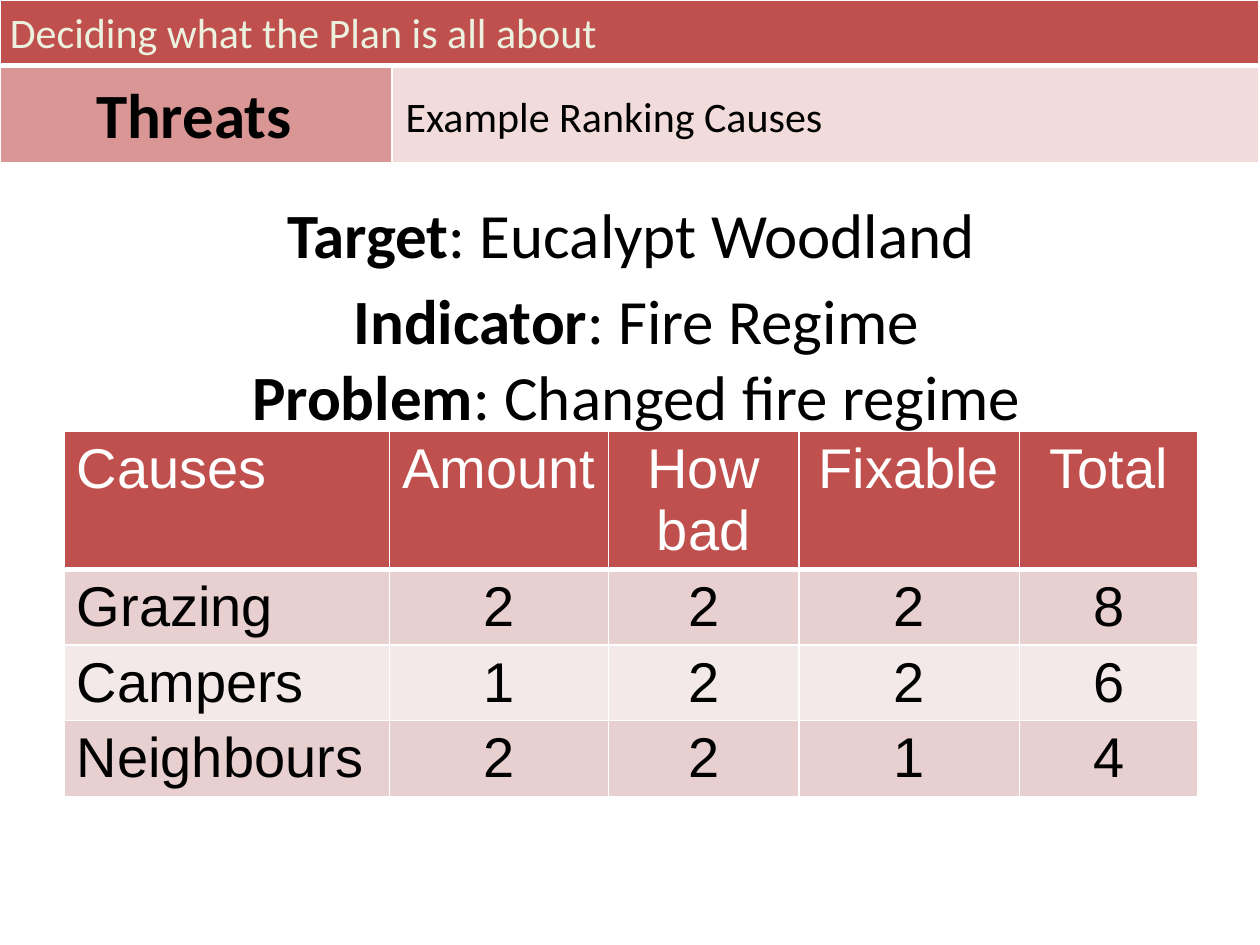
import pptx
import pptx.util
import pptx.dml.color
import pptx.enum.text
import pptx.oxml
import pptx.oxml.ns

RGBColor = pptx.dml.color.RGBColor
Inches = pptx.util.Inches
Pt = pptx.util.Pt
ALIGN = pptx.enum.text.PP_ALIGN
ANCHOR = pptx.enum.text.MSO_ANCHOR

RED = RGBColor(0xC0, 0x50, 0x4D)
ROSE = RGBColor(0xD9, 0x96, 0x94)
BLUSH = RGBColor(0xF2, 0xDC, 0xDB)
BAND_DARK = RGBColor(0xE8, 0xD0, 0xD0)
BAND_LIGHT = RGBColor(0xF4, 0xE9, 0xE9)
CREAM = RGBColor(0xEB, 0xF1, 0xDE)
WHITE = RGBColor(0xFF, 0xFF, 0xFF)
BLACK = RGBColor(0, 0, 0)

WIDTH, HEIGHT = 10, 7.5
CAUSES = [
    ["Causes", "Amount", "How bad", "Fixable", "Total"],
    ["Grazing", "2", "2", "2", "8"],
    ["Campers", "1", "2", "2", "6"],
    ["Neighbours", "2", "2", "1", "4"],
]


def format_cell(cell, color, bottom_width=1):
    """Fill a cell and give it white borders."""
    cell.fill.solid()
    cell.fill.fore_color.rgb = color
    properties = cell._tc.get_or_add_tcPr()
    namespace = pptx.oxml.ns.nsdecls("a")
    widths = {"lnL": 1, "lnR": 1, "lnT": 1, "lnB": bottom_width}
    for index, (side, width) in enumerate(widths.items()):
        properties.insert(index, pptx.oxml.parse_xml(
            f'<a:{side} {namespace} w="{Pt(width)}"><a:solidFill>'
            f'<a:srgbClr val="{WHITE}"/></a:solidFill></a:{side}>'))


def add_grid(slide, box, columns, rows):
    """Add a table with the given column widths and row heights."""
    shape = slide.shapes.add_table(
        len(rows), len(columns), *(Inches(length) for length in box))
    for column, width in zip(shape.table.columns, columns):
        column.width = Inches(width)
    for row, height in zip(shape.table.rows, rows):
        row.height = Inches(height)
    return shape.table


def write_lines(shape, lines, size, color=BLACK, align=ALIGN.LEFT,
                anchor=ANCHOR.TOP):
    """Write lines, each a list of (text, bold) runs, into a shape."""
    frame = shape.text_frame
    frame.word_wrap = True
    frame.auto_size = pptx.enum.text.MSO_AUTO_SIZE.NONE
    frame.vertical_anchor = anchor
    for index, line in enumerate(lines):
        paragraph = frame.add_paragraph() if index else frame.paragraphs[0]
        paragraph.alignment = align
        for text, bold in line:
            run = paragraph.add_run()
            run.text = text
            run.font.name = "Calibri"
            run.font.size = Pt(size)
            run.font.bold = bold
            run.font.color.rgb = color


def add_text(slide, box, lines, size, **style):
    shape = slide.shapes.add_textbox(*(Inches(length) for length in box))
    write_lines(shape, lines, size, **style)
    return shape


def add_header(slide, box):
    """Coloured band with the section, the topic and the slide's subject."""
    left, top, width, height = box
    topic_width, section_height = 3.11, 0.52
    table = add_grid(slide, box, [topic_width, width - topic_width],
                     [section_height, height - section_height])
    format_cell(table.cell(0, 0), RED, 3)
    format_cell(table.cell(0, 1), RED, 3)
    table.cell(0, 0).merge(table.cell(0, 1))
    format_cell(table.cell(1, 0), ROSE)
    format_cell(table.cell(1, 1), BLUSH)

    add_text(slide, (left - 0.02, top, width, 0.51),
             [[("Deciding what the Plan is all about", False)]], 24, color=CREAM)

    # The title stands in front of the band
    title = slide.shapes.title
    title.left, title.top = Inches(left), Inches(top + 0.55)
    title.width, title.height = Inches(3.08), Inches(0.71)
    write_lines(title, [[("Threats", True)]], 36, align=ALIGN.CENTER)
    title._element.getparent().append(title._element)

    add_text(slide, (left + 3.12, top + 0.67, 6.88, 0.5),
             [[("Example Ranking Causes", False)]], 24)


def add_subject(slide, box, facts):
    """Centred lines that each start with a bold label."""
    lines = [[(label, True), (f": {value}", False)] for label, value in facts]
    shape = add_text(slide, box, lines, 36, align=ALIGN.CENTER,
                     anchor=ANCHOR.MIDDLE)
    shape.text_frame.margin_top = Inches(0.08)
    shape.text_frame.margin_bottom = 0


def add_causes(slide, box):
    """Ranking table with a red heading row and banded body rows."""
    table = add_grid(slide, box, [2.58, 1.74, 1.51, 1.75, 1.42],
                     [1.1] + [0.6] * (len(CAUSES) - 1))
    for row, values in enumerate(CAUSES):
        band = BAND_DARK if row % 2 else BAND_LIGHT
        for column, value in enumerate(values):
            cell = table.cell(row, column)
            format_cell(cell, band if row else RED, 1 if row else 3)
            cell.text_frame.text = value
            paragraph = cell.text_frame.paragraphs[0]
            paragraph.alignment = ALIGN.CENTER if column else ALIGN.LEFT
            font = paragraph.runs[0].font
            font.name = "Arial"
            font.size = Pt(32)
            font.bold = False
            font.color.rgb = BLACK if row else WHITE


def main():
    presentation = pptx.Presentation()
    presentation.slide_width = Inches(WIDTH)
    presentation.slide_height = Inches(HEIGHT)
    slide = presentation.slides.add_slide(presentation.slide_layouts[5])

    add_header(slide, (0, 0, 9.99, 1.29))
    add_causes(slide, (0.51, 3.42, 9, 2.9))
    add_subject(slide, (0.06, 1.46, 9.9, 0.71), [("Target", "Eucalypt Woodland")])
    add_subject(slide, (0.1, 2.17, 9.9, 1.25),
                [("Indicator", "Fire Regime"), ("Problem", "Changed fire regime")])
    presentation.save("out.pptx")


if __name__ == "__main__":
    main()
